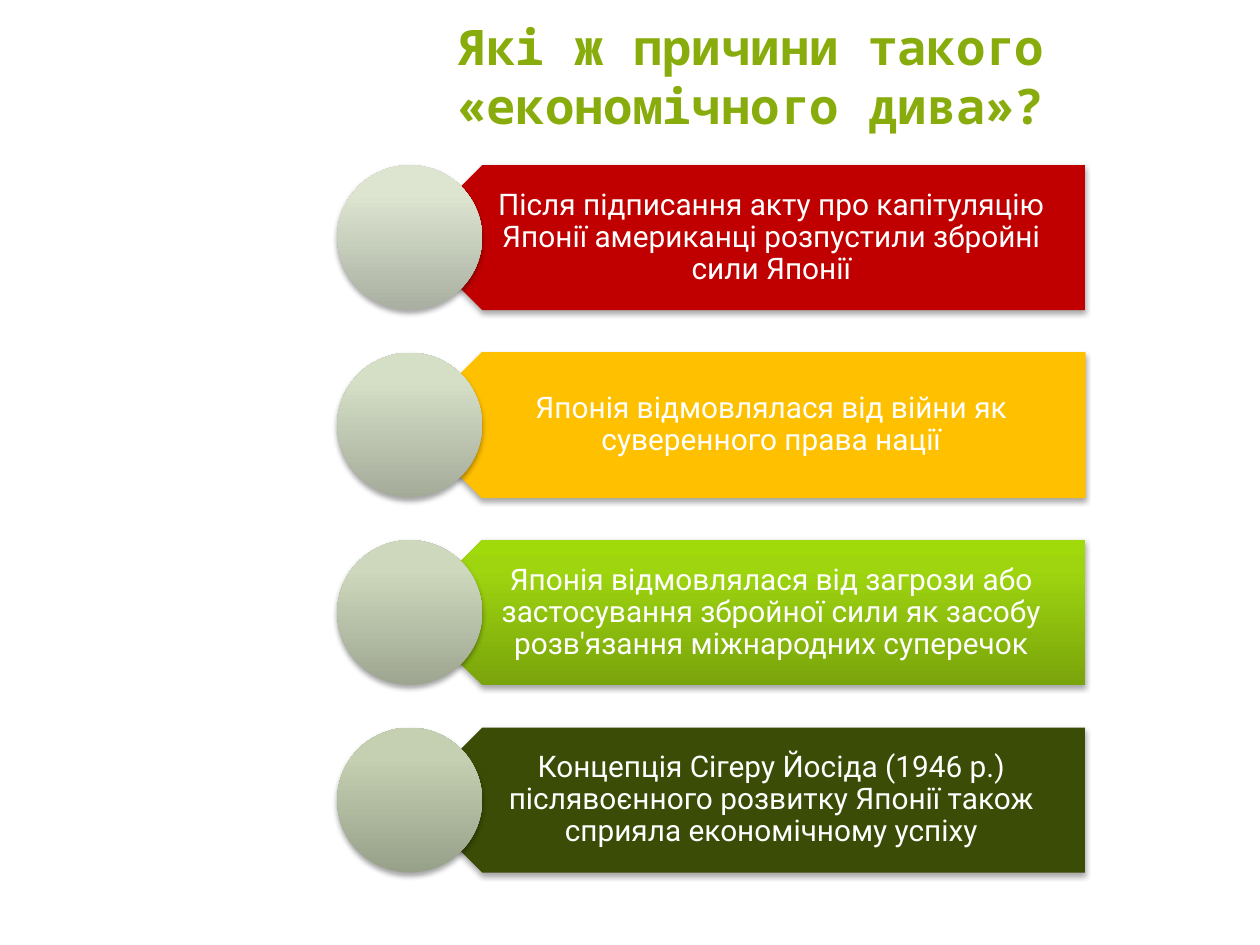
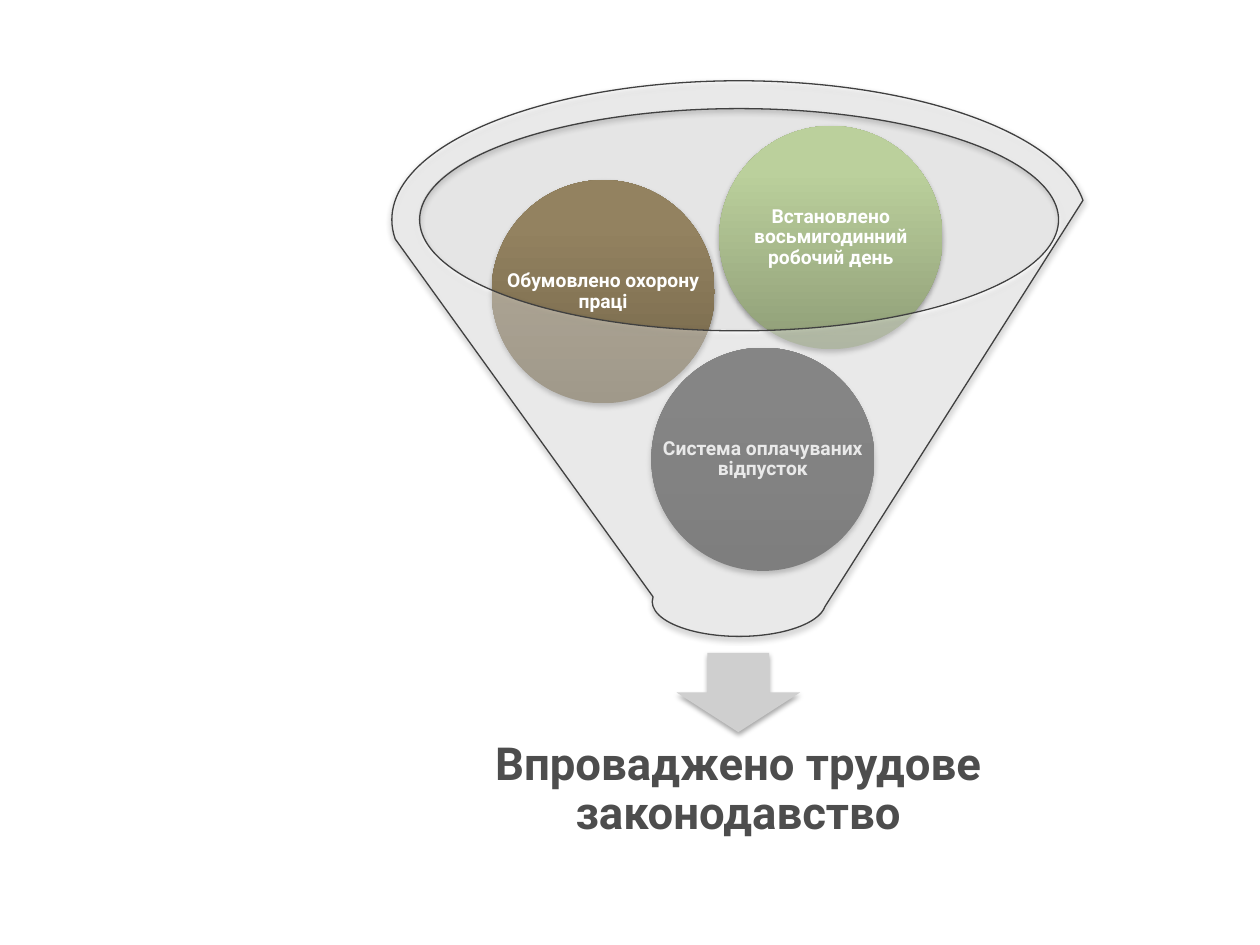
from lxml import etree
from pptx import Presentation
from pptx.dml.color import RGBColor
from pptx.enum.shapes import MSO_SHAPE
from pptx.enum.text import MSO_ANCHOR, PP_ALIGN
from pptx.oxml.ns import qn
from pptx.util import Cm, Pt

OVAL = MSO_SHAPE.OVAL
PLATE = MSO_SHAPE.PENTAGON
ARROW = MSO_SHAPE.DOWN_ARROW
FUNNEL = MSO_SHAPE.FUNNEL
MIDDLE = MSO_ANCHOR.MIDDLE
CENTER = PP_ALIGN.CENTER


def shades(*codes):
    return tuple(RGBColor.from_string(code) for code in codes)


WHITE = RGBColor(0xFF, 0xFF, 0xFF)
BLACK = RGBColor(0x00, 0x00, 0x00)
OLIVE = RGBColor(0x88, 0xAC, 0x0C)
RED = RGBColor(0xC0, 0x00, 0x00)
AMBER = RGBColor(0xFF, 0xC0, 0x00)
MOSS = RGBColor(0x3B, 0x4C, 0x06)
SILVER = RGBColor(0xC0, 0xC0, 0xC0)
PALE = RGBColor(0xCF, 0xCF, 0xCF)
INK = RGBColor(0x4D, 0x4D, 0x4D)
EDGE = RGBColor(0x40, 0x40, 0x40)
LIME = shades("7AA40B", "9ED50F", "A1DA0B")
GREY = shades("303030", "3E3E3E", "3E3E3E")
BROWN = shades("726448", "938260", "94835F")
GREEN = shades("8F9D77", "BBD09C", "BDD29D")

CAUSES = [
    ("Після підписання акту про капітуляцію Японії американці розпустили збройні сили Японії",
     RED, None, shades("AAB0A1", "DDE5D1", "DEE6D1")),
    ("Японія відмовлялася від війни як суверенного права нації",
     AMBER, AMBER, shades("A4AB99", "D5DFC6", "D6E0C7")),
    ("Японія відмовлялася від загрози або застосування збройної сили як засобу "
     "розв'язання міжнародних суперечок",
     LIME, None, shades("9EA691", "CDD8BC", "CED9BD")),
    ("Концепція Сігеру Йосіда (1946 р.) післявоєнного розвитку Японії також "
     "сприяла економічному успіху",
     MOSS, None, shades("97A089", "C5D0B2", "C6D2B3")),
]
RIGHTS = [
    ("Система оплачуваних відпусток", 13.13, 7.01, GREY),
    ("Обумовлено охорону праці", 9.91, 3.63, BROWN),
    ("Встановлено восьмигодинний робочий день", 14.5, 2.54, GREEN),
]


def add(parent, tag, **attrs):
    node = etree.SubElement(parent, qn(tag))
    for name, value in attrs.items():
        node.set(name, str(value))
    return node


class Deck:
    font = "Roboto"
    mono = "Noto Sans Mono"

    def __init__(self):
        self.prs = Presentation()
        self.prs.slide_width = Cm(25.4)
        self.prs.slide_height = Cm(19.05)
        self.slide = None

    def page(self):
        self.slide = self.prs.slides.add_slide(self.prs.slide_layouts[6])

    def shade(self, shape):
        shape.shadow.inherit = False
        cast = add(shape._element.spPr.find(qn("a:effectLst")), "a:outerShdw",
                   blurRad=Pt(3.1), dist=Pt(1.8), dir=5400000, rotWithShape=0)
        add(add(cast, "a:srgbClr", val=BLACK), "a:alpha", val=35000)

    def blend(self, shape, tones):
        shape.fill.gradient()
        grad = shape._element.spPr.find(qn("a:gradFill"))
        for child in list(grad):
            grad.remove(child)
        grad.set("rotWithShape", "0")
        stops = add(grad, "a:gsLst")
        for pos, tone in zip((0, 80000, 100000), tones):
            add(add(stops, "a:gs", pos=pos), "a:srgbClr", val=tone)
        add(grad, "a:lin", ang=16200000, scaled=0)

    def shape(self, kind, box, fill, line=None, turn=0, alpha=None, shadow=True):
        shape = self.slide.shapes.add_shape(kind, *map(Cm, box))
        shape.rotation = turn
        if isinstance(fill, RGBColor):
            shape.fill.solid()
            shape.fill.fore_color.rgb = fill
        else:
            self.blend(shape, fill)
        if alpha:
            tint = shape._element.spPr.find(qn("a:solidFill"))[0]
            add(tint, "a:alpha", val=alpha * 1000)
        if line is None:
            shape.line.fill.background()
        else:
            shape.line.color.rgb = line
            shape.line.width = Pt(0.75)
        if shadow:
            self.shade(shape)
        else:
            shape.shadow.inherit = False

    def text(self, words, box, size, color, bold=False, font=None,
             pads=(0.05, 0.05, 0.05, 0.05), space=0.9):
        frame = self.slide.shapes.add_textbox(*map(Cm, box)).text_frame
        frame.word_wrap = True
        frame.vertical_anchor = MIDDLE
        (frame.margin_left, frame.margin_top,
         frame.margin_right, frame.margin_bottom) = map(Cm, pads)
        para = frame.paragraphs[0]
        para.alignment = CENTER
        para.line_spacing = space
        run = para.add_run()
        run.text = words
        run.font.name = font or self.font
        run.font.size = Pt(size)
        run.font.bold = bold
        run.font.color.rgb = color

    def title(self, words):
        self.text(words, (5.51, 0.53, 19.25, 1.98), 28, OLIVE, True, self.mono,
                  (0.25, 0.13, 0.25, 0.13), 1.0)


def causes(deck):
    deck.page()
    deck.title("Які ж причини такого «економічного дива»?")
    high = 2.92
    for row, (words, fill, line, tones) in enumerate(CAUSES):
        top = 3.33 + row * 3.78
        band = (8.26, top, 13.61, high)
        deck.shape(PLATE, band, fill, line, turn=180)
        deck.text(words, band, 17, WHITE, pads=(1.3, 0.18, 0.33, 0.18))
        deck.shape(OVAL, (6.8, top, high, high), tones)


def rights(deck):
    deck.page()
    deck.shape(OVAL, (8.43, 2.18, 12.9, 4.47), SILVER, alpha=40, shadow=False)
    deck.shape(ARROW, (13.64, 13.16, 2.49, 1.6), PALE)
    deck.text("Впроваджено трудове законодавство", (8.89, 14.43, 11.99, 3),
              26, INK, True, pads=(0.51, 0.51, 0.51, 0.51))
    for words, left, top, tones in RIGHTS:
        ball = (left, top, 4.5, 4.5)
        deck.shape(OVAL, ball, tones)
        deck.text(words, ball, 11, WHITE, True)
    deck.shape(FUNNEL, (7.9, 1.63, 14, 11.2), WHITE, EDGE, alpha=40)


def main():
    deck = Deck()
    causes(deck)
    rights(deck)
    deck.prs.save("out.pptx")


if __name__ == "__main__":
    main()
